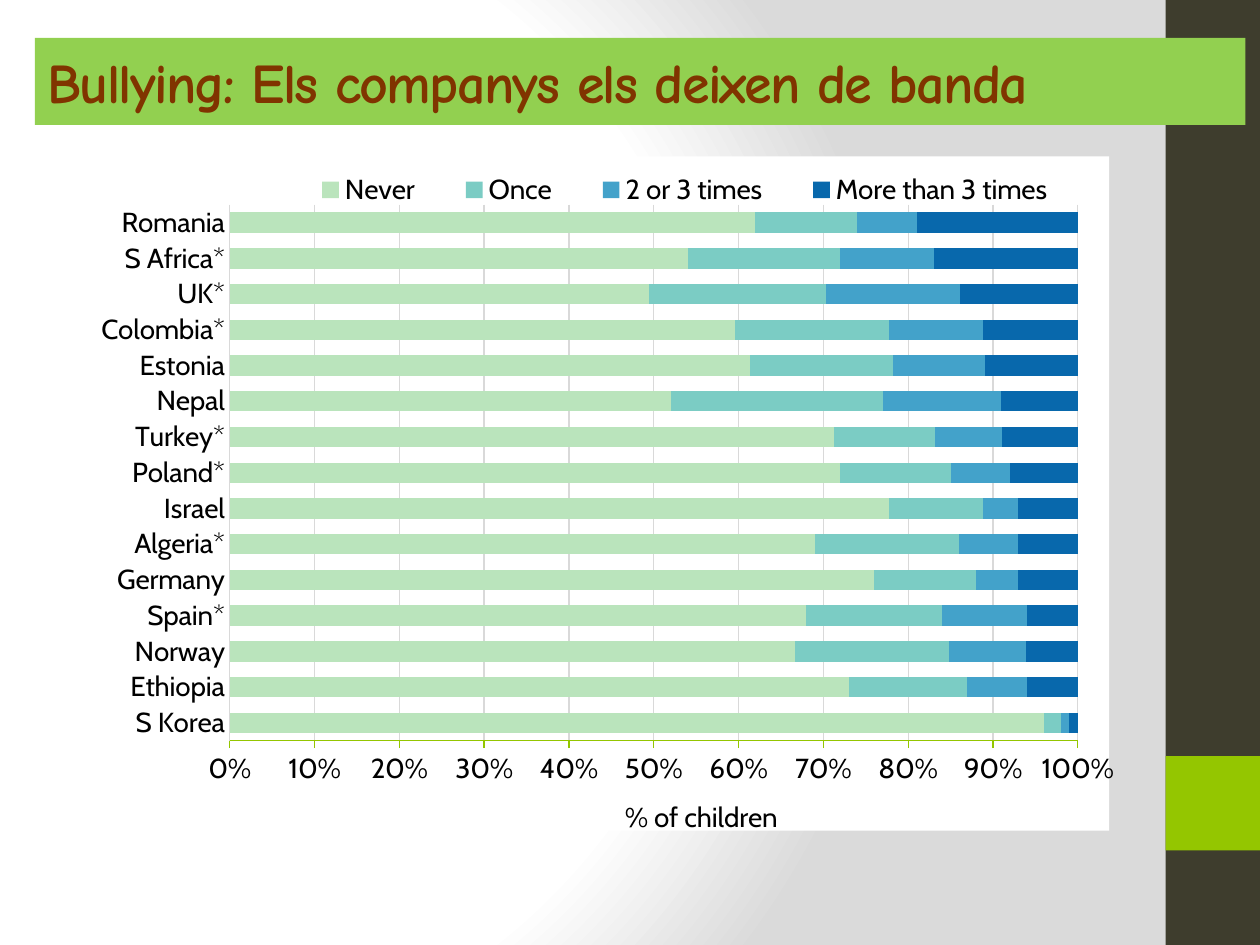
from lxml.etree import fromstring
from pptx import Presentation
from pptx.chart.data import CategoryChartData
from pptx.dml.color import RGBColor
from pptx.enum.chart import XL_CHART_TYPE, XL_LEGEND_POSITION, XL_TICK_MARK
from pptx.enum.shapes import MSO_SHAPE
from pptx.enum.text import MSO_ANCHOR, PP_ALIGN
from pptx.oxml.ns import qn
from pptx.util import Pt

NS = ('xmlns:a="http://schemas.openxmlformats.org/drawingml/2006/main" '
      'xmlns:c="http://schemas.openxmlformats.org/drawingml/2006/chart"')

# Content
TITLE = "Bullying: Els companys els deixen de banda"
UNIT = "% of children"
SERIES = [("Never", "BAE4BC"), ("Once", "7BCCC4"),
          ("2 or 3 times", "43A2CA"), ("More than 3 times", "0868AC")]
ROWS = [  # bottom to top
    ("S Korea", 96, 2, 1, 1),
    ("Ethiopia", 73, 14, 7, 6),
    ("Norway", 66, 18, 9, 6),
    ("Spain*", 68, 16, 10, 6),
    ("Germany", 76, 12, 5, 7),
    ("Algeria*", 69, 17, 7, 7),
    ("Israel", 77, 11, 4, 7),
    ("Poland*", 72, 13, 7, 8),
    ("Turkey*", 72, 12, 8, 9),
    ("Nepal", 52, 25, 14, 9),
    ("Estonia", 62, 17, 11, 11),
    ("Colombia*", 59, 18, 11, 11),
    ("UK*", 50, 21, 16, 14),
    ("S Africa*", 54, 18, 11, 17),
    ("Romania", 62, 12, 7, 19),
]
STOPS = [(0, "FFFFFF"), (75, "FFFFFF"), (100, "DADADA")]

# Boxes in points: left, top, width, height
BAND = (666, 0, 54, 540)
BLOCK = (666, 432, 54, 54)
HEAD = (20, 21.7, 691.7, 49.7)
CHART = (56.2, 89.3, 580.3, 392)

# Formats
LABEL = {"name": "Cabin", "size": Pt(16), "bold": False}
HEADING = {"name": "Comic Neue", "size": Pt(32), "bold": True}
SCALE = {"minimum_scale": 0, "maximum_scale": 1, "major_unit": 0.1,
         "has_major_gridlines": True, "major_tick_mark": XL_TICK_MARK.OUTSIDE}


def rgb(code):
    return RGBColor.from_string(code)


def apply(item, form):
    for key, value in form.items():
        setattr(item, key, value)


def style(font, form, code):
    apply(font, form)
    font.color.rgb = rgb(code)


def stroke(line, code):
    line.color.rgb = rgb(code)
    line.width = Pt(0.75)


def place(node, index, inner="", **share):
    """Set the manual layout of a chart part, as shares of the chart."""
    for old in node.findall(qn("c:layout")):
        node.remove(old)
    modes = {"xMode": "edge", "yMode": "edge"}
    parts = "".join(f'<c:{k} val="{v}"/>' for k, v in (modes | share).items())
    node.insert(index, fromstring(
        f"<c:layout {NS}><c:manualLayout>{inner}{parts}"
        "</c:manualLayout></c:layout>"))


def add_box(slide, box, code):
    shape = slide.shapes.add_shape(MSO_SHAPE.RECTANGLE, *map(Pt, box))
    shape.shadow.inherit = False
    shape.fill.solid()
    shape.fill.fore_color.rgb = rgb(code)
    shape.line.fill.background()
    return shape


def paint_back(slide):
    slide.background.fill.solid()
    back = slide._element.cSld.bg.bgPr
    stops = "".join(f'<a:gs pos="{pos * 1000}"><a:srgbClr val="{code}"/></a:gs>'
                    for pos, code in STOPS)
    back.replace(back[0], fromstring(
        f'<a:gradFill {NS} rotWithShape="1"><a:gsLst>{stops}</a:gsLst>'
        '<a:path path="circle"><a:fillToRect l="20000" t="50000" '
        'r="100000" b="50000"/></a:path></a:gradFill>'))


def add_head(slide):
    frame = add_box(slide, HEAD, "92D050").text_frame
    apply(frame, {"word_wrap": True, "vertical_anchor": MSO_ANCHOR.MIDDLE})
    para = frame.paragraphs[0]
    para.alignment = PP_ALIGN.LEFT
    run = para.add_run()
    run.text = TITLE
    style(run.font, HEADING, "803400")
    run.font._element.set("spc", "-100")


def add_bars(slide):
    names, *columns = zip(*ROWS)
    data = CategoryChartData(number_format="0")
    data.categories = names
    for (name, _), column in zip(SERIES, columns):
        data.add_series(name, column)
    chart = slide.shapes.add_chart(
        XL_CHART_TYPE.BAR_STACKED_100, *map(Pt, CHART), data).chart
    chart.has_title = False
    style(chart.font, LABEL, "000000")

    # Bars
    plot = chart.plots[0]
    apply(plot, {"gap_width": 75, "overlap": 100, "vary_by_categories": False})
    for bar, (_, code) in zip(plot.series, SERIES):
        bar.format.fill.solid()
        bar.format.fill.fore_color.rgb = rgb(code)

    # Axes
    side, base = chart.category_axis, chart.value_axis
    side.major_tick_mark = XL_TICK_MARK.NONE
    apply(base, SCALE)
    apply(base.tick_labels, {"number_format": "0%",
                             "number_format_is_linked": False})
    for axis, code in ((side, "D9D9D9"), (base, "94C600")):
        style(axis.tick_labels.font, LABEL, "000000")
        stroke(axis.format.line, code)
    stroke(base.major_gridlines.format.line, "D9D9D9")
    frame = base.axis_title.text_frame
    frame.text = UNIT
    style(frame.paragraphs[0].runs[0].font, LABEL, "000000")

    # Legend
    chart.has_legend = True
    apply(chart.legend, {"position": XL_LEGEND_POSITION.TOP,
                         "include_in_layout": False})
    style(chart.legend.font, LABEL, "000000")

    # Layout and white ground
    space = chart._chartSpace
    place(space.chart.plotArea, 0, '<c:layoutTarget val="inner"/>',
          x=0.13, y=0.072, w=0.839, h=0.795)
    place(base.axis_title._element, 1, x=0.516, y=0.945)
    place(chart.legend._element, 1, x=0.18, y=0.025, w=0.8, h=0.05)
    space.chart.addnext(fromstring(
        f'<c:spPr {NS}><a:solidFill><a:srgbClr val="FFFFFF"/></a:solidFill>'
        "<a:ln><a:noFill/></a:ln></c:spPr>"))


def main():
    deck = Presentation()
    apply(deck, {"slide_width": Pt(720), "slide_height": Pt(540)})
    slide = deck.slides.add_slide(deck.slide_layouts[6])
    paint_back(slide)
    add_box(slide, BAND, "3E3D2D")
    add_box(slide, BLOCK, "94C600")
    add_head(slide)
    add_bars(slide)
    deck.save("out.pptx")


if __name__ == "__main__":
    main()
